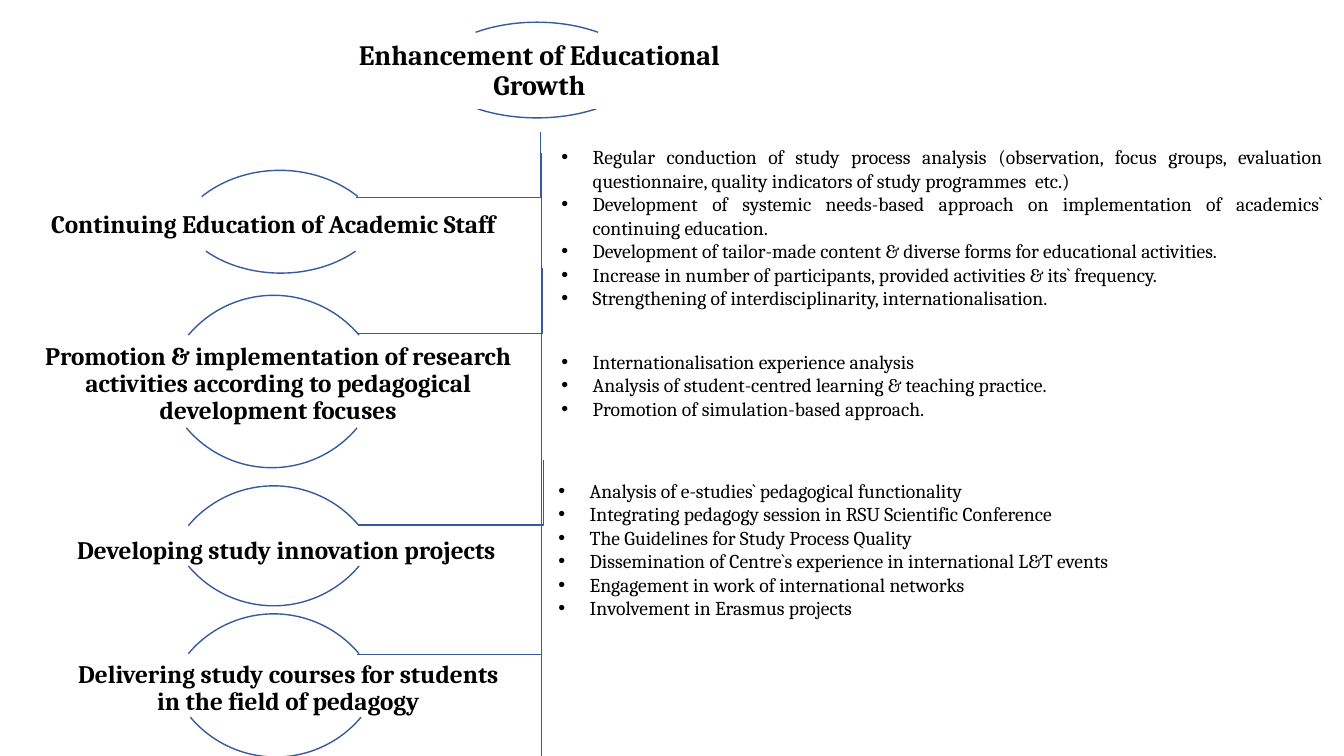
from dataclasses import dataclass

from lxml import etree
from pptx import Presentation
from pptx.dml.color import RGBColor
from pptx.enum.shapes import MSO_CONNECTOR, MSO_SHAPE
from pptx.enum.text import MSO_ANCHOR, MSO_AUTO_SIZE, PP_ALIGN
from pptx.oxml.ns import qn
from pptx.util import Inches, Pt

ARC = MSO_SHAPE.ARC
STRAIGHT = MSO_CONNECTOR.STRAIGHT
MIDDLE = MSO_ANCHOR.MIDDLE
TOP = MSO_ANCHOR.TOP
FIT_SHAPE = MSO_AUTO_SIZE.SHAPE_TO_FIT_TEXT
NO_FIT = MSO_AUTO_SIZE.NONE
CENTER = PP_ALIGN.CENTER
JUSTIFY = PP_ALIGN.JUSTIFY


@dataclass(frozen=True)
class Theme:
    font: str = "Cambria"
    ink: RGBColor = RGBColor(0x00, 0x00, 0x00)
    paper: RGBColor = RGBColor(0xFF, 0xFF, 0xFF)
    accent: RGBColor = RGBColor(0x36, 0x5B, 0x9D)
    title_size: int = 20
    topic_size: int = 18
    bullet_size: int = 14
    line_width: int = 1


THEME = Theme()
SLIDE_WIDTH, SLIDE_HEIGHT = 13.33, 7.5
ARC_WIDTH = 2.21
ELBOW_RUN, ELBOW_DROP = 1.83, 0.65
BULLET_INDENT = 0.31
LABEL_INSET = 0.01
UPPER_ANGLES, LOWER_ANGLES = (132, 192), (24, 84)

TITLE = "Enhancement of Educational Growth"
TITLE_BOX = (3.14, 0.33, 4.42, 0.75)
TITLE_ARCS = ((1.08, -0.11, 1.22), (1.08, -0.33, 1.17))
TRUNK = (5.37, 1.52)

# text, box, upper arc and lower arc (dx, dy, height), elbow start (dx, dy)
TOPICS = [
    ("Continuing Education of Academic Staff", (0.26, 1.53, 4.9, 1.41),
     ((1.41, 0.16, 1.82), (1.42, -0.5, 1.68)), (5.1, -0.22)),
    ("Promotion & implementation of research activities according to pedagogical "
     "development focuses", (0.31, 3.11, 4.9, 1.41),
     ((1.3, -0.18, 2.21), (1.28, -0.68, 2.21)), (5.07, -0.45)),
    ("Developing study innovation projects", (0.63, 4.76, 4.42, 1.41),
     ((0.98, 0.06, 2.21), (0.98, -0.96, 2.21)), (4.76, -0.2)),
    ("Delivering study courses for students in the field of pedagogy",
     (0.65, 6.13, 4.42, 1.41),
     ((0.96, -0.04, 2.21), (0.98, -0.83, 2.21)), (4.72, -0.29)),
]

BULLET_LISTS = [
    ((5.47, 1.39, 7.75, 1.75), [
        "Regular conduction of study process analysis (observation, focus groups, "
        "evaluation questionnaire, quality indicators of study programmes  etc.)",
        "Development of systemic needs-based approach on implementation of "
        "academics` continuing education.",
        "Development of tailor-made content & diverse forms for educational activities.",
        "Increase in number of participants, provided activities & its` frequency.",
        "Strengthening of interdisciplinarity, internationalisation.",
    ]),
    ((5.47, 3.42, 7.5, 0.81), [
        "Internationalisation experience analysis",
        "Analysis of student-centred learning & teaching practice.",
        "Promotion of simulation-based approach.",
    ]),
    ((5.44, 4.7, 7.72, 2.22), [
        "Analysis of e-studies` pedagogical functionality",
        "Integrating pedagogy session in RSU Scientific Conference",
        "The Guidelines for Study Process Quality",
        "Dissemination of Centre`s experience in international L&T events",
        "Engagement in work of international networks",
        "Involvement in Erasmus projects",
    ]),
]


def add_bullet(paragraph):
    properties = paragraph._p.get_or_add_pPr()
    properties.set("marL", str(Inches(BULLET_INDENT)))
    properties.set("indent", str(-Inches(BULLET_INDENT)))
    etree.SubElement(properties, qn("a:buFont")).set("typeface", "Arial")
    etree.SubElement(properties, qn("a:buChar")).set("char", "•")


def add_text(slide, box, lines, *, size, bold=False, align=CENTER, anchor=MIDDLE,
             line_spacing=None, inset=None, fill=None, bullets=False, fit=NO_FIT):
    shape = slide.shapes.add_textbox(*map(Inches, box))
    if fill is not None:
        shape.fill.solid()
        shape.fill.fore_color.rgb = fill
    frame = shape.text_frame
    frame.word_wrap = True
    frame.auto_size = fit
    frame.vertical_anchor = anchor
    if inset is not None:
        frame.margin_left = frame.margin_right = Inches(inset)
        frame.margin_top = frame.margin_bottom = Inches(inset)
    for index, line in enumerate(lines):
        paragraph = frame.add_paragraph() if index else frame.paragraphs[0]
        if bullets:
            add_bullet(paragraph)
        paragraph.alignment = align
        if line_spacing is not None:
            paragraph.line_spacing = line_spacing
        run = paragraph.add_run()
        run.text = line
        run.font.name = THEME.font
        run.font.size = Pt(size)
        run.font.bold = bold
        run.font.color.rgb = THEME.ink


def style_line(shape):
    shape.line.color.rgb = THEME.accent
    shape.line.width = Pt(THEME.line_width)


def style_outline(shape):
    shape.shadow.inherit = False
    shape.fill.background()
    style_line(shape)


def add_elbow(slide, left, top):
    right, bottom = left, top + ELBOW_DROP
    builder = slide.shapes.build_freeform(Inches(right), Inches(top))
    builder.add_line_segments(
        [(Inches(right), Inches(bottom)), (Inches(right - ELBOW_RUN), Inches(bottom))],
        close=False)
    style_outline(builder.convert_to_shape())


def add_trunk(slide, left, top):
    trunk = slide.shapes.add_connector(
        STRAIGHT, Inches(left), Inches(top), Inches(left), Inches(SLIDE_HEIGHT))
    style_line(trunk)
    etree.SubElement(trunk._element.spPr, qn("a:effectLst"))


def add_topic(slide, box, text, arcs, *, size, elbow=None, fill=None):
    left, top = box[:2]
    if elbow:
        add_elbow(slide, left + elbow[0], top + elbow[1])
    for (dx, dy, height), angles in zip(arcs, (UPPER_ANGLES, LOWER_ANGLES)):
        arc = slide.shapes.add_shape(
            ARC, Inches(left + dx), Inches(top + dy), Inches(ARC_WIDTH), Inches(height))
        arc.adjustments[0], arc.adjustments[1] = angles
        style_outline(arc)
    add_text(slide, box, [text], size=size, bold=True, line_spacing=0.9,
             inset=LABEL_INSET, fill=fill)


def add_bullet_list(slide, box, lines):
    add_text(slide, box, lines, size=THEME.bullet_size, align=JUSTIFY, anchor=TOP,
             bullets=True, fit=FIT_SHAPE)


def main():
    presentation = Presentation()
    presentation.slide_width = Inches(SLIDE_WIDTH)
    presentation.slide_height = Inches(SLIDE_HEIGHT)
    slide = presentation.slides.add_slide(presentation.slide_layouts[6])
    add_trunk(slide, *TRUNK)
    add_topic(slide, TITLE_BOX, TITLE, TITLE_ARCS, size=THEME.title_size,
              fill=THEME.paper)
    for text, box, arcs, elbow in TOPICS:
        add_topic(slide, box, text, arcs, size=THEME.topic_size, elbow=elbow)
    for box, lines in BULLET_LISTS:
        add_bullet_list(slide, box, lines)
    presentation.save("out.pptx")


if __name__ == "__main__":
    main()
